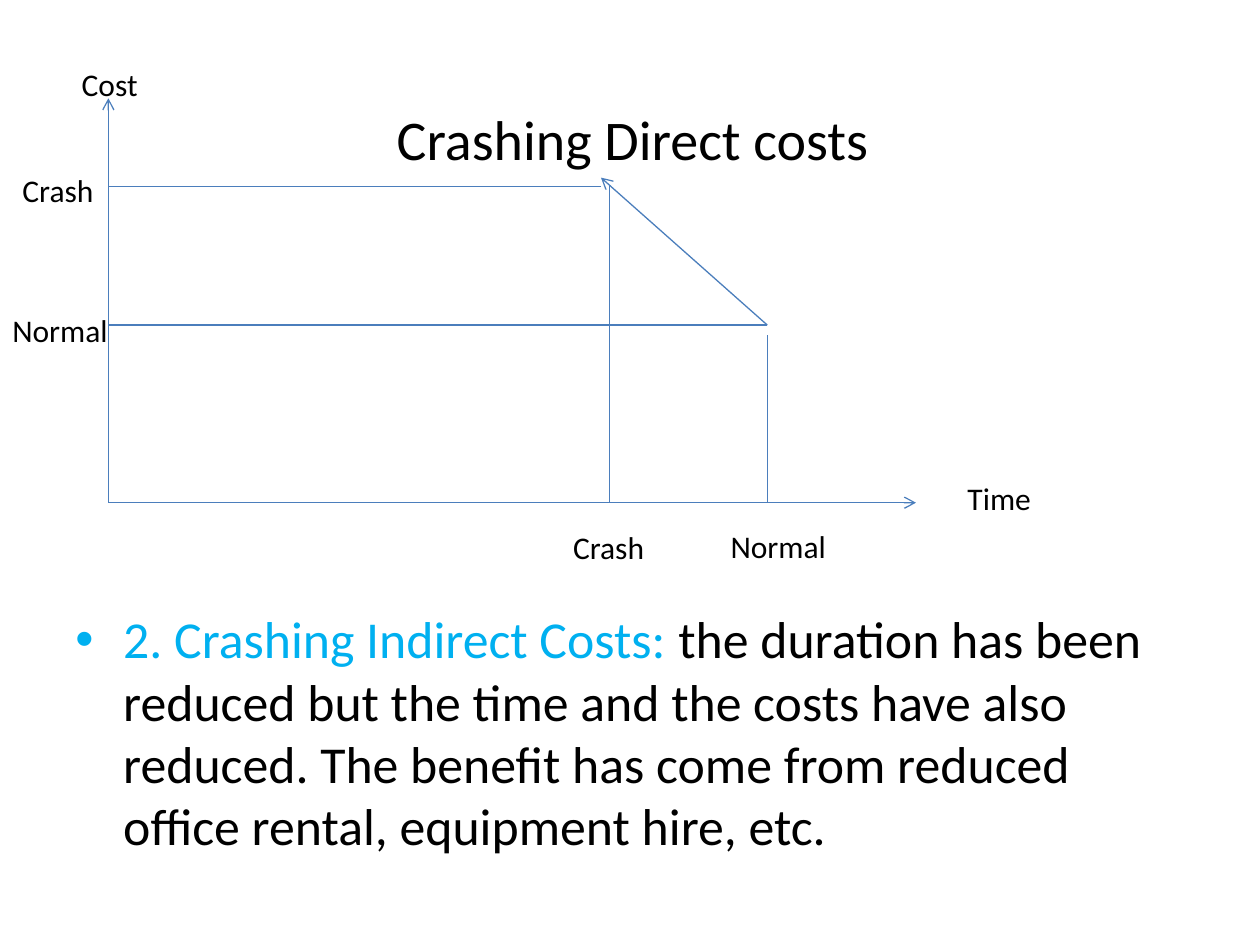
from lxml import etree
from pptx import Presentation
from pptx.dml.color import RGBColor
from pptx.enum import shapes, text
from pptx.oxml.ns import qn
from pptx.util import Emu, Inches, Pt

COLORS = {"text": "000000", "accent": "00B0F0", "line": "4B7EBC"}
FONT = "Calibri"
COLS, ROWS = 10, 7.5

prs = Presentation()
prs.slide_width, prs.slide_height = Inches(10), Inches(7.5)


def col(n):
    return Emu(round(prs.slide_width * n / COLS))


def row(n):
    return Emu(round(prs.slide_height * n / ROWS))


def add_text(s, runs, box, size=18, wrap=False, bullet=None, indent=0):
    """Place one paragraph of (words, colour) runs in a box of columns and rows."""
    x, y, w, h = box
    tb = s.shapes.add_textbox(col(x), row(y), col(w), row(h))
    tf = tb.text_frame
    tf.word_wrap = wrap
    tf.auto_size = text.MSO_AUTO_SIZE.NONE if wrap else text.MSO_AUTO_SIZE.SHAPE_TO_FIT_TEXT
    p = tf.paragraphs[0]
    if bullet:
        pPr = p._p.get_or_add_pPr()
        pPr.set("marL", str(col(indent)))
        pPr.set("indent", str(-col(indent)))
        etree.SubElement(pPr, qn("a:buFont"), typeface="Arial")
        etree.SubElement(pPr, qn("a:buChar"), char=bullet)
    for words, color in runs:
        r = p.add_run()
        r.text = words
        r.font.name, r.font.size = FONT, Pt(size)
        r.font.color.rgb = RGBColor.from_string(COLORS[color])
    return tb


def add_line(s, start, end, arrow=False):
    c = s.shapes.add_connector(shapes.MSO_CONNECTOR.STRAIGHT,
                               col(start[0]), row(start[1]), col(end[0]), row(end[1]))
    c.line.color.rgb = RGBColor.from_string(COLORS["line"])
    c.line.width = Pt(0.75)
    if arrow:
        etree.SubElement(c.line._get_or_add_ln(), qn("a:tailEnd"), type="arrow")
    etree.SubElement(c._element.spPr, qn("a:effectLst"))


def cost_graph(s, box):
    """Cost against time; the box is bounded by the two axes."""
    x, y, w, h = box
    base = y + h
    crash_t, normal_t = x + 3.98, x + 5.23
    crash_c, normal_c = y + 0.7, y + 1.8
    tip = crash_t - 0.07

    # Axes, then the cost slope
    add_line(s, (x, base), (x, y), arrow=True)
    add_line(s, (x, base), (x + w, base), arrow=True)
    add_line(s, (normal_t, normal_c), (tip, crash_c - 0.07), arrow=True)

    # Guides to the cost axis and to the time axis
    add_line(s, (tip, crash_c), (x, crash_c))
    add_line(s, (normal_t, normal_c), (x, normal_c))
    add_line(s, (crash_t, crash_c), (crash_t, base))
    add_line(s, (normal_t, normal_c + 0.08), (normal_t, base))

    # Labels
    labels = [
        ("Cost", x - 0.31, y - 0.31, 0.65),
        ("Time", x + w + 0.31, base - 0.24, 0.71),
        ("Crash", x - 0.78, crash_c - 0.17, 0.77),
        ("Normal", x - 0.86, normal_c - 0.16, 0.97),
        ("Crash", crash_t - 0.39, base + 0.15, 0.77),
        ("Normal", normal_t - 0.39, base + 0.14, 0.97),
    ]
    for words, left, top, width in labels:
        add_text(s, [(words, "text")], (left, top, width, 0.4))


def title(s, box):
    add_text(s, [("Crashing Direct costs", "text")], box, size=32)


def body(s, box):
    add_text(s, [
        ("2. Crashing Indirect Costs: ", "accent"),
        ("the duration has been reduced but the time and the costs have also reduced. "
         "The benefit has come from reduced office rental, equipment hire, etc.", "text"),
    ], box, size=29.6, wrap=True, bullet="•", indent=0.38)


def main():
    s = prs.slides.add_slide(prs.slide_layouts[6])
    body(s, (0.5, 4.77, 9, 1.93))
    cost_graph(s, (0.86, 0.78, 6.41, 3.21))
    title(s, (3.05, 0.78, 3.98, 0.64))
    prs.save("out.pptx")


if __name__ == "__main__":
    main()
